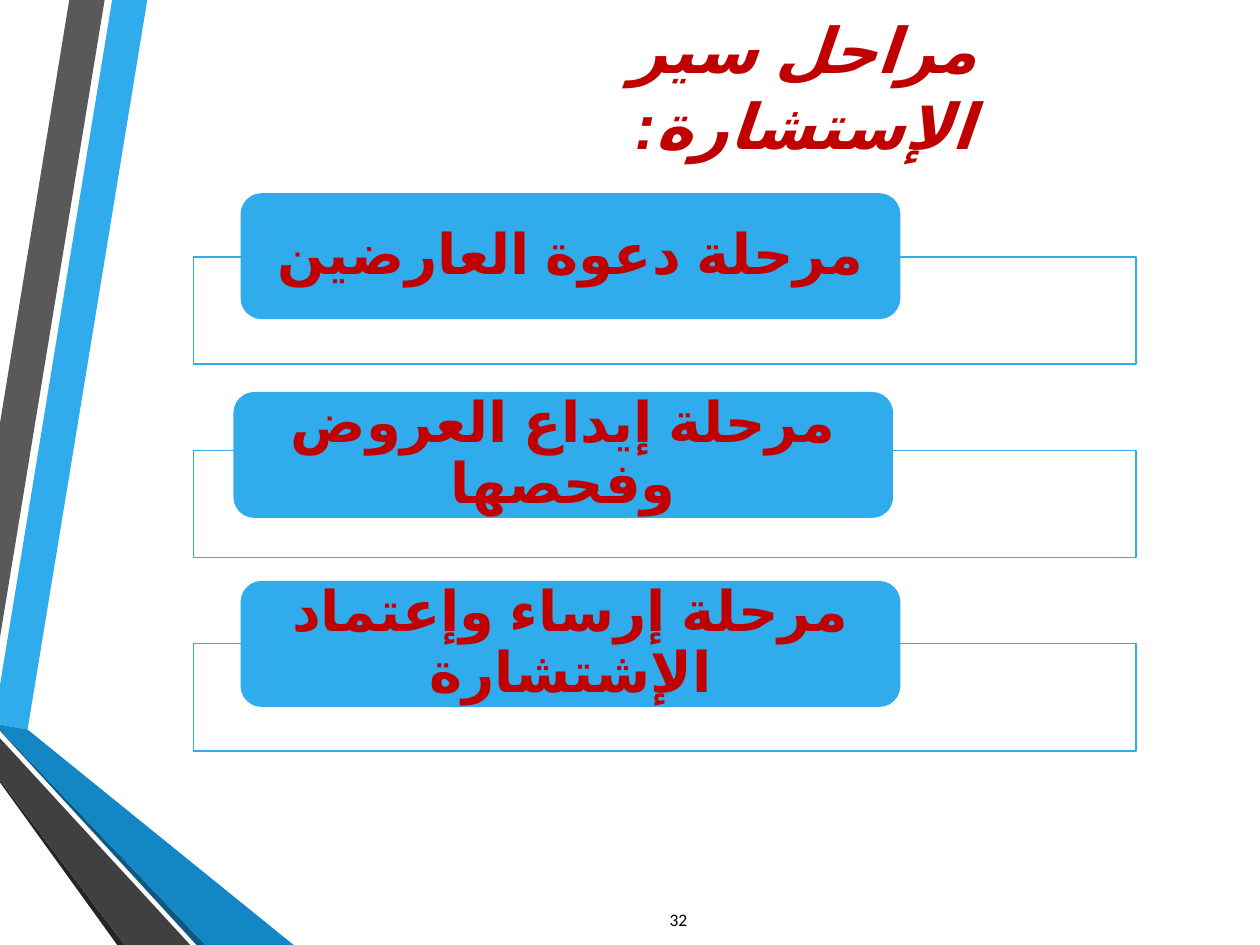
"""Build a slide listing the three stages of a consultation procedure."""
from dataclasses import dataclass

from lxml.etree import SubElement
from pptx import Presentation
from pptx.dml.color import RGBColor
from pptx.enum.lang import MSO_LANGUAGE_ID as Language
from pptx.enum.shapes import MSO_SHAPE as Preset
from pptx.enum.text import MSO_ANCHOR as Anchor, MSO_AUTO_SIZE as AutoSize, PP_ALIGN as Align
from pptx.oxml.ns import qn
from pptx.shapes.autoshape import Shape
from pptx.slide import Slide
from pptx.text.text import TextFrame
from pptx.util import Pt

BLUE = RGBColor(0x30, 0xAC, 0xEC)
MID_BLUE = RGBColor(0x12, 0x87, 0xC3)
DEEP_BLUE = RGBColor(0x0C, 0x5A, 0x82)
GREY = RGBColor(0x59, 0x59, 0x59)
DARK_GREY = RGBColor(0x40, 0x40, 0x40)
CHARCOAL = RGBColor(0x26, 0x26, 0x26)
RED = RGBColor(0xC0, 0x00, 0x00)
BLACK = RGBColor(0, 0, 0)
WHITE = RGBColor(0xFF, 0xFF, 0xFF)

PANEL_TOP, PANEL_STEP = 146.9, 110.5


@dataclass(frozen=True)
class Ribbon:
    color: RGBColor
    points: tuple[tuple[float, float], ...]


@dataclass(frozen=True)
class Stage:
    label: str
    left: float
    top: float


RIBBONS = (
    Ribbon(BLUE, ((0, 391.7), (0, 414), (15.8, 416.9), (84.2, 0), (64.1, 0))),
    Ribbon(GREY, ((59.8, 0), (39.6, 0), (0, 241.9), (0, 364.3))),
    Ribbon(CHARCOAL, ((0, 445.7), (0, 447.1), (67, 540), (71.3, 540))),
    Ribbon(DEEP_BLUE, ((0, 416.9), (0, 417.6), (112.3, 540), (117.4, 540))),
    Ribbon(MID_BLUE, ((0, 416.9), (117.4, 540), (167.8, 540), (15.8, 416.9), (0, 414))),
    Ribbon(DARK_GREY, ((0, 445.7), (71.3, 540), (108.7, 540), (0, 421.9))),
)
STAGES = (
    Stage("مرحلة دعوة العارضين", 137.5, 110.4),
    Stage("مرحلة إيداع العروض وفحصها", 133.4, 224),
    Stage("مرحلة إرساء وإعتماد الإشتشارة", 137.5, 332),
)


def paint(shape: Shape, color: RGBColor) -> None:
    """Give a shape a flat fill with no outline or shadow."""
    shape.shadow.inherit = False
    shape.fill.solid()
    shape.fill.fore_color.rgb = color
    shape.line.fill.background()


def write(frame: TextFrame, text: str, size: float, color: RGBColor, font: str = "Arial",
          bold: bool = True, italic: bool = False, rtl: bool = True) -> None:
    """Set one centred paragraph of formatted text."""
    frame.text = text
    frame.word_wrap = True
    frame.auto_size = AutoSize.NONE
    frame.vertical_anchor = Anchor.MIDDLE
    para = frame.paragraphs[0]
    para.alignment = Align.CENTER
    span = para.runs[0]
    span.font.size = Pt(size)
    span.font.bold = bold
    span.font.italic = italic
    span.font.color.rgb = color
    span.font.name = font
    if rtl:
        para._p.get_or_add_pPr().set("rtl", "1")
        span.font.language_id = Language.ARABIC_ALGERIA
        SubElement(span._r.get_or_add_rPr(), qn("a:cs"), typeface=font)


def draw_ribbon(page: Slide, ribbon: Ribbon) -> None:
    """Draw one closed band of the side decoration."""
    start, *rest = [(Pt(x), Pt(y)) for x, y in ribbon.points]
    builder = page.shapes.build_freeform(*start)
    builder.add_line_segments(rest, close=True)
    paint(builder.convert_to_shape(), ribbon.color)


def draw_stage(page: Slide, stage: Stage, panel_top: float) -> None:
    """Draw an outlined panel and the labelled card over it."""
    panel = page.shapes.add_shape(Preset.RECTANGLE, Pt(110.6), Pt(panel_top), Pt(538.6), Pt(61.2))
    paint(panel, WHITE)
    SubElement(panel.fill._xPr.find(qn("a:solidFill"))[0], qn("a:alpha"), val="90000")
    panel.line.color.rgb = BLUE
    panel.line.width = Pt(0.75)

    card = page.shapes.add_shape(
        Preset.ROUNDED_RECTANGLE, Pt(stage.left), Pt(stage.top), Pt(377), Pt(72))
    paint(card, BLUE)
    frame = card.text_frame
    frame.margin_left = frame.margin_right = Pt(14.4)
    frame.margin_top = frame.margin_bottom = Pt(0)
    write(frame, stage.label, 32, RED)
    frame.paragraphs[0].line_spacing = 0.9


def main() -> None:
    """Create and save the deck."""
    deck = Presentation()
    deck.slide_width, deck.slide_height = Pt(720), Pt(540)
    page = deck.slides.add_slide(deck.slide_layouts[5])
    for ribbon in RIBBONS:
        draw_ribbon(page, ribbon)

    title = page.shapes.title
    title.left, title.top, title.width, title.height = Pt(303.8), Pt(25.2), Pt(311), Pt(48.2)
    write(title.text_frame, "مراحل سير الإستشارة:", 36, RED, italic=True)

    number = page.shapes.add_textbox(Pt(303.8), Pt(511.2), Pt(167.8), Pt(28.8))
    write(number.text_frame, "32", 10, BLACK, font="Calibri", bold=False, rtl=False)

    for index, stage in enumerate(STAGES):
        draw_stage(page, stage, PANEL_TOP + index * PANEL_STEP)
    deck.save("out.pptx")


if __name__ == "__main__":
    main()
